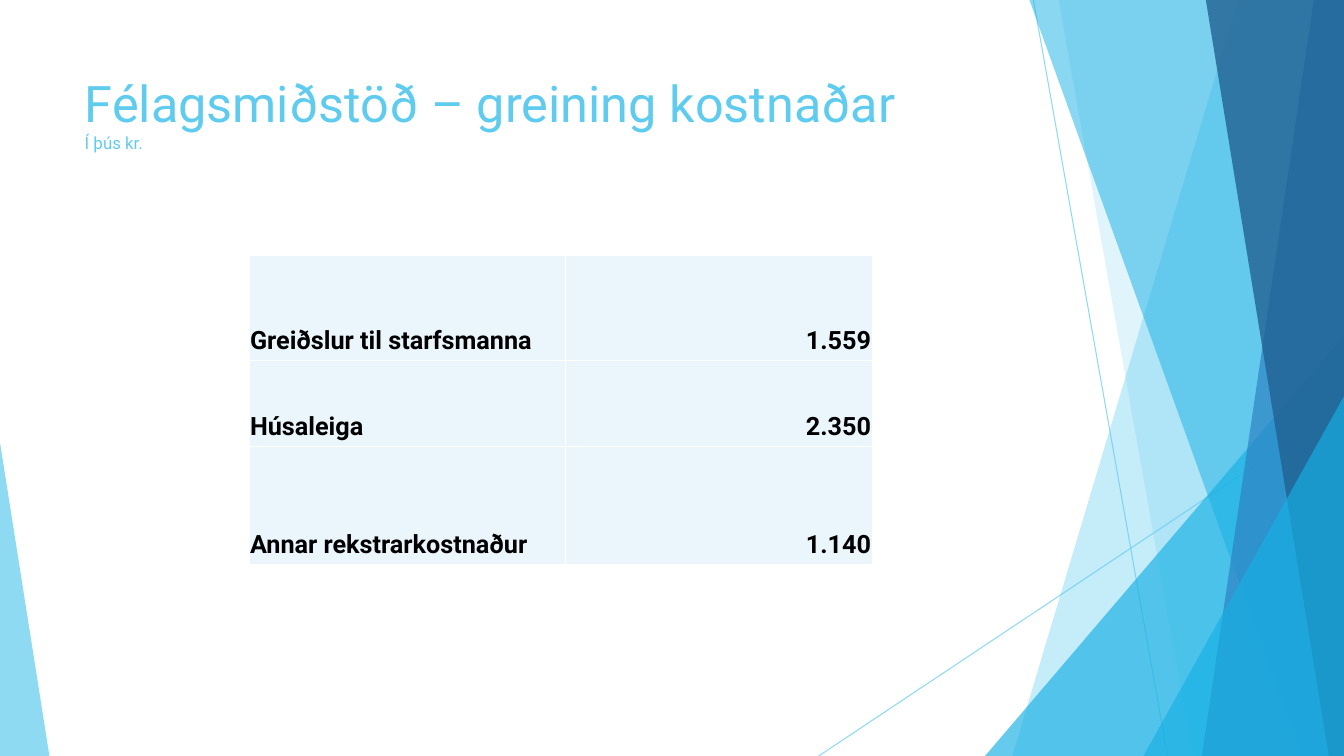
from lxml import etree
from pptx import Presentation
from pptx.dml.color import RGBColor
from pptx.enum.shapes import MSO_CONNECTOR, MSO_SHAPE
from pptx.enum.text import MSO_ANCHOR, MSO_AUTO_SIZE, PP_ALIGN
from pptx.oxml import parse_xml
from pptx.oxml.ns import nsdecls, qn
from pptx.util import Inches, Pt

SKY = RGBColor(0x5F, 0xCB, 0xEF)
CYAN = RGBColor(0x17, 0xB0, 0xE4)
BLUE = RGBColor(0x2E, 0x83, 0xC3)
NAVY = RGBColor(0x22, 0x62, 0x92)
PALE = RGBColor(0xEA, 0xF6, 0xFC)
BLACK = RGBColor(0, 0, 0)
FONT = "Roboto"
W, H = 13.33, 7.5


def set_alpha(sp, percent):
    color = sp._element.spPr.find(".//" + qn("a:srgbClr"))
    etree.SubElement(color, qn("a:alpha")).set("val", str(percent * 1000))


def style_facet(sp, color, percent):
    sp.shadow.inherit = False
    sp.fill.solid()
    sp.fill.fore_color.rgb = color
    set_alpha(sp, percent)
    sp.line.fill.background()


prs = Presentation()
prs.slide_width, prs.slide_height = Inches(W), Inches(H)
s = prs.slides.add_slide(prs.slide_layouts[5])

# Thin crossing lines
for x1, y1, x2, y2 in [(10.25, 0, 11.58, H), (W, 4.03, 8.12, H)]:
    line = s.shapes.add_connector(MSO_CONNECTOR.STRAIGHT, Inches(x1), Inches(y1),
                                  Inches(x2), Inches(y2))
    line.line.color.rgb = SKY
    line.line.width = Pt(0.75)
    set_alpha(line, 70)
    etree.SubElement(line._element.spPr, qn("a:effectLst"))

# Facets, back to front: bands give top and bottom x of their slanted left edge,
# triangles give left, top, width and apex position
facets = [
    ("band", (12.28, 10.04), SKY, 36),
    ("band", (10.5, 11.83), SKY, 20),
    ("triangle", (9.77, 3.33, 3.56, 1), CYAN, 66),
    ("band", (10.21, 12.91), CYAN, 50),
    ("band", (13.03, 11.92), BLUE, 70),
    ("band", (11.96, 13.18), NAVY, 80),
    ("triangle", (11.34, 3.93, 1.99, 1), CYAN, 66),
    ("triangle", (0, 4.39, 0.49, 0), SKY, 70),
]
for kind, place, color, percent in facets:
    if kind == "band":
        top_x, bottom_x = place
        outline = s.shapes.build_freeform(Inches(top_x), 0)
        outline.add_line_segments([(Inches(x), Inches(y)) for x, y in
                                   [(W, 0), (W, H), (bottom_x, H)]])
        sp = outline.convert_to_shape()
    else:
        left, top, width, apex = place
        sp = s.shapes.add_shape(MSO_SHAPE.ISOSCELES_TRIANGLE, Inches(left), Inches(top),
                                Inches(width), Inches(H - top))
        sp.adjustments[0] = apex
    style_facet(sp, color, percent)

# Title with a small unit line
title = s.shapes.title
title.left, title.top = Inches(0.74), Inches(0.67)
title.width, title.height = Inches(9.4), Inches(1.44)
tf = title.text_frame
tf.word_wrap = True
tf.auto_size = MSO_AUTO_SIZE.NONE
tf.vertical_anchor = MSO_ANCHOR.TOP
tf.text = "Félagsmiðstöð – greining kostnaðar\vÍ þús kr."
p = tf.paragraphs[0]
p.alignment = PP_ALIGN.LEFT
for r, size in zip(p.runs, (36, 12)):
    r.font.name = FONT
    r.font.size = Pt(size)
    r.font.color.rgb = SKY

# Cost table
costs = [
    ("Greiðslur til starfsmanna", "1.559"),
    ("Húsaleiga", "2.350"),
    ("Annar rekstrarkostnaður", "1.140"),
]
table = s.shapes.add_table(3, 2, Inches(2.47), Inches(2.53), Inches(6.18), Inches(3.07)).table
for column, width in zip(table.columns, (3.14, 3.04)):
    column.width = Inches(width)
for row, height in zip(table.rows, (1.05, 0.85, 1.17)):
    row.height = Inches(height)
for i, cost in enumerate(costs):
    for j, text in enumerate(cost):
        cell = table.cell(i, j)
        cell.text = text
        cell.vertical_anchor = MSO_ANCHOR.BOTTOM
        cell.margin_left = cell.margin_top = cell.margin_right = Inches(0.01)
        cell.margin_bottom = Inches(0.05)
        for side in ("lnL", "lnR", "lnT", "lnB"):
            cell._tc.get_or_add_tcPr().append(parse_xml(
                f'<a:{side} {nsdecls("a")} w="12700"><a:solidFill>'
                f'<a:srgbClr val="FFFFFF"/></a:solidFill></a:{side}>'))
        cell.fill.solid()
        cell.fill.fore_color.rgb = PALE
        p = cell.text_frame.paragraphs[0]
        p.alignment = PP_ALIGN.RIGHT if j else PP_ALIGN.LEFT
        font = p.runs[0].font
        font.name = FONT
        font.size = Pt(18)
        font.bold = True
        font.color.rgb = BLACK

prs.save("out.pptx")
